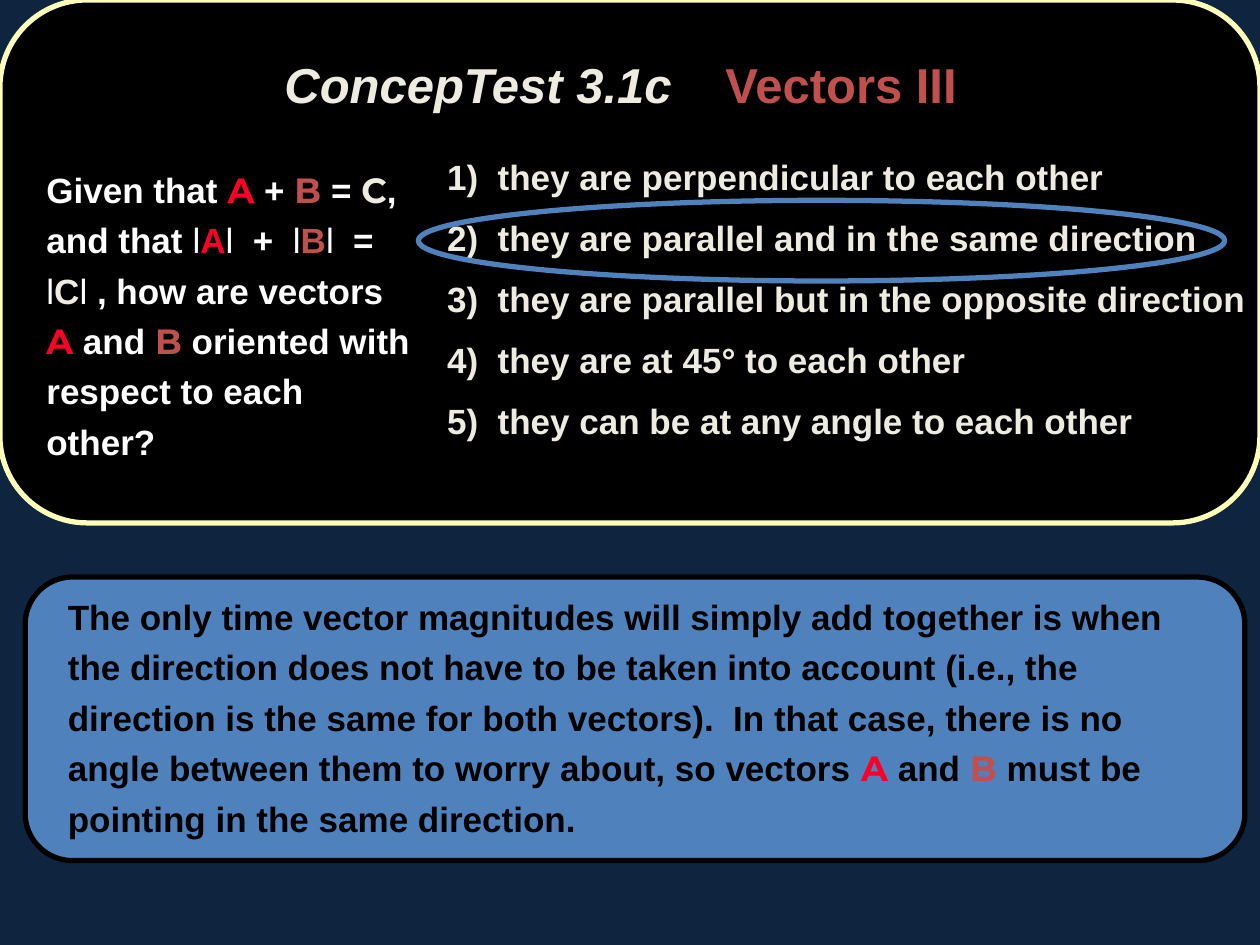
from typing import NamedTuple

from pptx import Presentation
from pptx.dml.color import RGBColor
from pptx.enum.shapes import MSO_SHAPE
from pptx.enum.text import MSO_AUTO_SIZE
from pptx.util import Inches, Pt

COLUMNS, ROWS = 100, 75  # grid cells over the whole slide
CELL = Inches(10) // COLUMNS

NAVY, BLACK, WHITE, CREAM = "0F243E", "000000", "FFFFFF", "EEECE1"
BLUE, YELLOW, RED, BRICK = "4F81BD", "FCFEB9", "FC0128", "C0504D"

BODY = {"name": "Arial", "size": Pt(20), "bold": True, "color": WHITE}
TITLE = BODY | {"size": Pt(28), "italic": True, "color": CREAM}
VECTOR_A = {"name": "Montserrat", "color": RED}
VECTOR_B = {"name": "Montserrat", "color": BRICK}
VECTOR_C = {"name": "Montserrat", "color": CREAM}
BAR = {"bold": False}

QUESTION = [
    ("Given that ", {}), ("A", VECTOR_A), (" + ", {}), ("B", VECTOR_B),
    (" = ", {}), ("C", VECTOR_C), (", and that ", {}),
    ("l", BAR), ("A", {"color": RED}), ("l ", BAR), (" +  ", {}),
    ("l", BAR), ("B", {"color": BRICK}), ("l ", BAR), (" =  ", {}),
    ("l", BAR), ("C", {"color": CREAM}), ("l ", BAR),
    (", how are vectors ", {}), ("A", VECTOR_A), (" and ", {}),
    ("B", VECTOR_B), (" oriented with respect to each other?", {}),
]
ANSWERS = [
    "they are perpendicular to each other",
    "they are parallel and in the same direction",
    "they are parallel but in the opposite direction",
    "they are at 45° to each other",
    "they can be at any angle to each other",
]
EXPLANATION = [
    ("The only time vector magnitudes will simply add together is when the "
     "direction does not have to be taken into account (i.e., the direction is "
     "the same for both vectors).  In that case, there is no angle between them "
     "to worry about, so vectors ", {}),
    ("A ", VECTOR_A), ("and ", {}), ("B ", VECTOR_B),
    ("must be pointing in the same direction.", {}),
]


class Box(NamedTuple):
    """Left, top, width and height in grid cells."""
    left: float
    top: float
    width: float
    height: float

    def inner(self, left, top, width, height):
        return Box(self.left + left, self.top + top, width, height)

    def lengths(self):
        return [round(cells * CELL) for cells in self]


def color(value):
    return RGBColor.from_string(value)


def add_outlined(page, kind, box, line, fill=None):
    shape = page.shapes.add_shape(kind, *box.lengths())
    shape.shadow.inherit = False
    if fill:
        shape.fill.solid()
        shape.fill.fore_color.rgb = color(fill)
    else:
        shape.fill.background()
    shape.line.color.rgb = color(line)
    shape.line.width = Pt(3)


def add_text(page, box, paragraphs, base, margin=0.0, spacing=1.0, before=0):
    """Each paragraph is a list of (words, changes to the base format)."""
    frame = page.shapes.add_textbox(*box.lengths()).text_frame
    frame.word_wrap = True
    for index, spans in enumerate(paragraphs):
        para = frame.add_paragraph() if index else frame.paragraphs[0]
        para.line_spacing, para.space_before = spacing, Pt(before)
        if margin:
            para._p.get_or_add_pPr().set("marL", str(Inches(margin)))
        for words, changes in spans:
            span = para.add_run()
            span.text = words
            for key, value in (base | changes).items():
                if key == "color":
                    span.font.color.rgb = color(value)
                else:
                    setattr(span.font, key, value)
    return frame


def add_body(page, box, paragraphs, ink):
    add_text(page, box, paragraphs, BODY | {"color": ink},
             margin=0.44, spacing=1.2, before=6)


def add_question_card(page, box):
    add_outlined(page, MSO_SHAPE.ROUNDED_RECTANGLE, box, YELLOW, BLACK)
    add_body(page, box.inner(-1.7, 12.2, 35.6, 29.7), [QUESTION], WHITE)
    answers = [[(f"{number})  {answer}", {})]
               for number, answer in enumerate(ANSWERS, 1)]
    add_body(page, box.inner(30.1, 11.2, 69.9, 28.4), answers, CREAM)
    add_outlined(page, MSO_SHAPE.OVAL, box.inner(33.2, 15.9, 64, 6.4), BLUE)
    heading = [("ConcepTest 3.1c \t", {}),
               ("Vectors III", {"color": BRICK, "italic": False})]
    frame = add_text(page, box.inner(21.6, 3.8, 68.6, 5.7), [heading], TITLE, before=14)
    frame.auto_size = MSO_AUTO_SIZE.SHAPE_TO_FIT_TEXT


def add_explanation_card(page, box):
    add_outlined(page, MSO_SHAPE.ROUNDED_RECTANGLE, box, BLACK, BLUE)
    add_body(page, box.inner(-2, 0.3, 98.1, 15.9), [EXPLANATION], BLACK)


def main():
    deck = Presentation()
    deck.slide_width, deck.slide_height = COLUMNS * CELL, ROWS * CELL
    page = deck.slides.add_slide(deck.slide_layouts[6])
    page.background.fill.solid()
    page.background.fill.fore_color.rgb = color(NAVY)
    add_explanation_card(page, Box(2, 45.8, 96.8, 22.5))
    add_question_card(page, Box(0, 0, COLUMNS, 41.5))
    deck.save("out.pptx")


if __name__ == "__main__":
    main()
